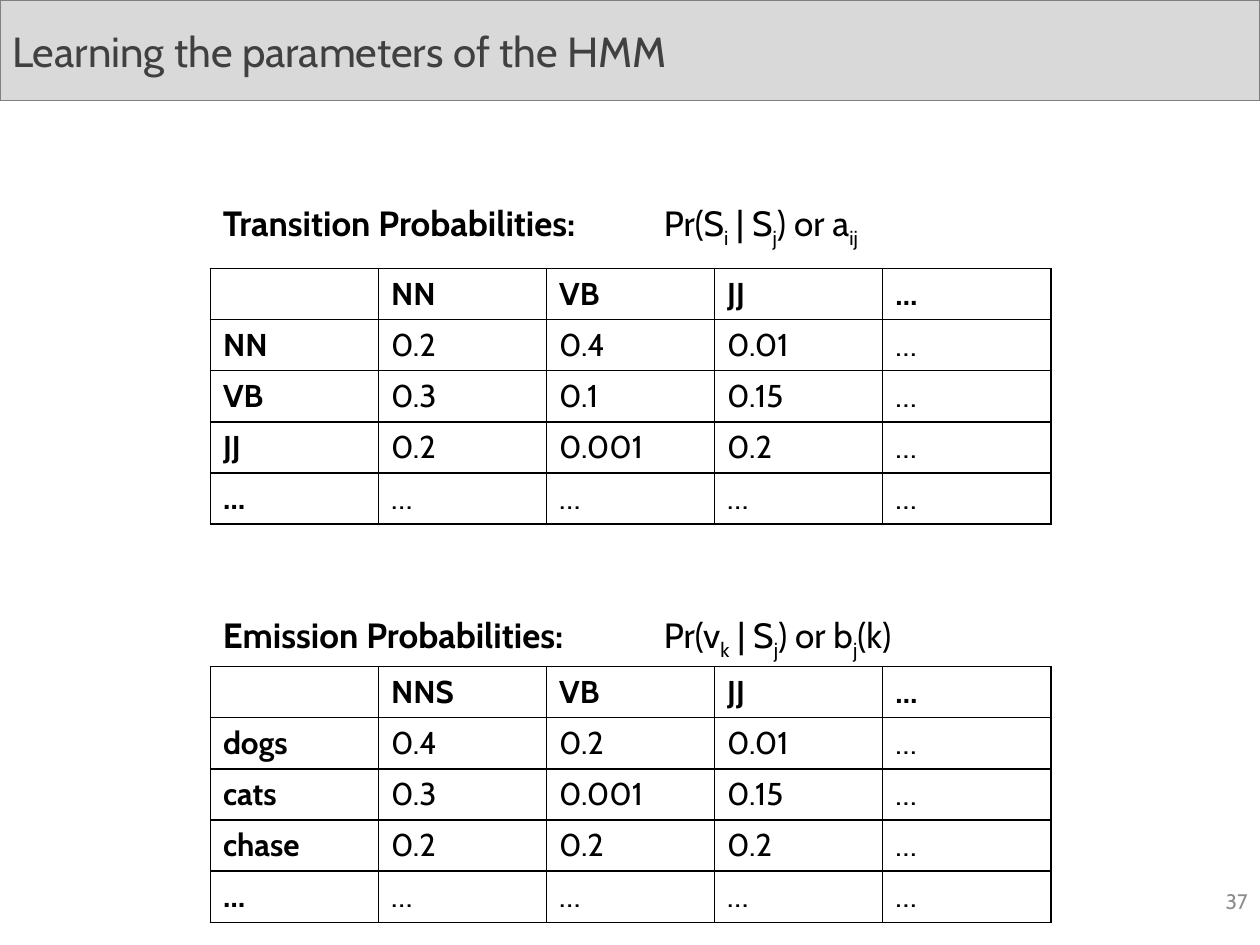
from pptx import Presentation
from pptx.util import Inches, Pt
from pptx.dml.color import RGBColor
from pptx.enum.shapes import MSO_SHAPE
from pptx.enum.text import MSO_ANCHOR, PP_ALIGN
from pptx.oxml.ns import qn
from lxml.etree import SubElement

COLORS = {"bar": "D9D9D9", "edge": "808080", "title": "404040",
          "number": "8C8C8C", "ink": "000000"}


def add_run(p, text, size, color, bold=False):
    r = p.add_run()
    r.text = text
    fmt = {"name": "Cabin", "size": Pt(size), "bold": bold}
    for key, value in fmt.items():
        setattr(r.font, key, value)
    r.font.color.rgb = RGBColor.from_string(COLORS[color])
    return r


def add_border(cell, side):
    ln = SubElement(cell._tc.get_or_add_tcPr(), qn(f"a:{side}"), w=str(Pt(1)))
    fill = SubElement(ln, qn("a:solidFill"))
    SubElement(fill, qn("a:srgbClr"), val=COLORS["ink"])


prs = Presentation()
prs.slide_width, prs.slide_height = Inches(10), Inches(7.5)
s = prs.slides.add_slide(prs.slide_layouts[6])

bar = s.shapes.add_shape(MSO_SHAPE.RECTANGLE, 0, 0, Inches(10), Inches(0.8))
bar.shadow.inherit = False
bar.fill.solid()
bar.fill.fore_color.rgb = RGBColor.from_string(COLORS["bar"])
bar.line.color.rgb = RGBColor.from_string(COLORS["edge"])
bar.line.width = Pt(0.75)
number = s.shapes.add_textbox(Inches(7.67), Inches(6.95), Inches(2.33), Inches(0.4))

for sp, text, size, color, align in [
    (bar, "Learning the parameters of the HMM", 24, "title", PP_ALIGN.LEFT),
    (number, "37", 12, "number", PP_ALIGN.RIGHT),
]:
    tf = sp.text_frame
    for key, value in {"word_wrap": True, "vertical_anchor": MSO_ANCHOR.MIDDLE}.items():
        setattr(tf, key, value)
    p = tf.paragraphs[0]
    p.alignment = align
    add_run(p, text, size, color)

left, width, table_height = Inches(1.67), Inches(6.67), Inches(2.03)

sections = [
    ("Transition Probabilities:", 1.55, 2.13,
     [("Pr(S", "i"), (" | S", "j"), (") or a", "ij")],
     [["", "NN", "VB", "JJ", "…"],
      ["NN", "0.2", "0.4", "0.01", "…"],
      ["VB", "0.3", "0.1", "0.15", "…"],
      ["JJ", "0.2", "0.001", "0.2", "…"],
      ["…", "…", "…", "…", "…"]]),
    ("Emission Probabilities:", 4.82, 5.29,
     [("Pr(v", "k"), (" | S", "j"), (") or b", "j"), ("(k)", "")],
     [["", "NNS", "VB", "JJ", "…"],
      ["dogs", "0.4", "0.2", "0.01", "…"],
      ["cats", "0.3", "0.001", "0.15", "…"],
      ["chase", "0.2", "0.2", "0.2", "…"],
      ["…", "…", "…", "…", "…"]]),
]

for heading, label_top, table_top, formula, rows in sections:
    table = s.shapes.add_table(len(rows), len(rows[0]), left, Inches(table_top),
                               width, table_height).table
    table.first_row = table.horz_banding = False
    for i, row in enumerate(rows):
        for j, text in enumerate(row):
            cell = table.cell(i, j)
            for side in ("lnL", "lnR", "lnT", "lnB"):
                add_border(cell, side)
            cell.fill.background()
            if text:
                add_run(cell.text_frame.paragraphs[0], text, 18, "ink",
                        bold=i == 0 or j == 0)

    tf = s.shapes.add_textbox(left, Inches(label_top), width, Inches(0.44)).text_frame
    tf.word_wrap = True
    p = tf.paragraphs[0]
    tabs = SubElement(p._p.get_or_add_pPr(), qn("a:tabLst"))
    SubElement(tabs, qn("a:tab"), pos=str(Inches(3.5)), algn="l")
    add_run(p, heading + "\t", 20, "ink", bold=True)
    for base, subscript in formula:
        add_run(p, base, 20, "ink")
        if subscript:
            r = add_run(p, subscript, 20, "ink")
            r._r.get_or_add_rPr().set("baseline", "-25000")

prs.save("out.pptx")
